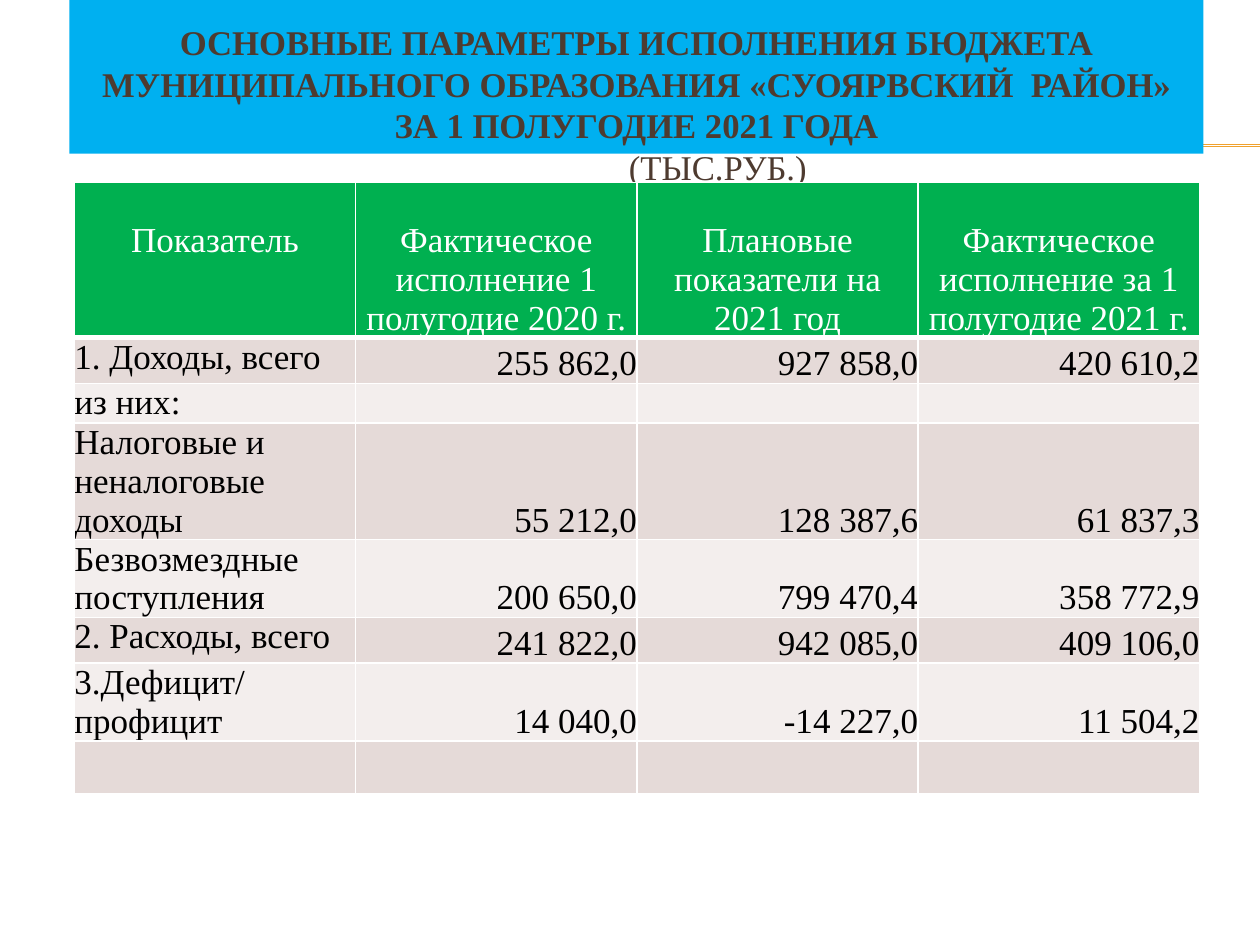
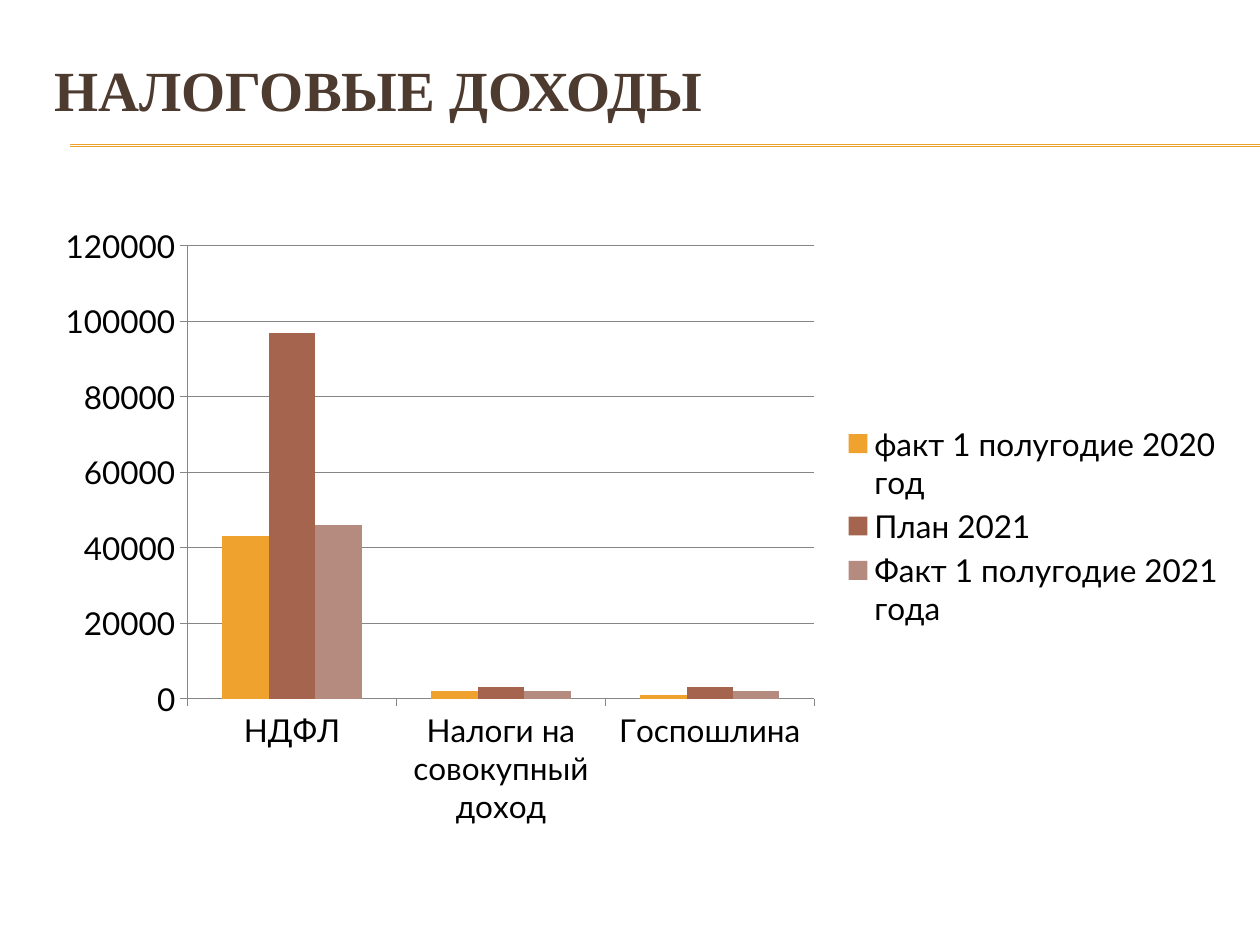
from lxml.etree import SubElement
from pptx import Presentation
from pptx.chart.data import CategoryChartData
from pptx.dml.color import RGBColor
from pptx.enum.chart import XL_CHART_TYPE as ChartType, XL_LEGEND_POSITION as LegendSide
from pptx.enum.chart import XL_TICK_MARK as Tick
from pptx.enum.shapes import MSO_CONNECTOR as Connector, MSO_SHAPE as Shape
from pptx.enum.text import MSO_ANCHOR as Anchor, PP_ALIGN as Align
from pptx.oxml.ns import qn
from pptx.util import Cm, Pt

COLORS = {
    "title": "4E3B30", "band": "00B0F0", "gold": "F0A22E", "header": "00B050",
    "odd_row": "E5DAD8", "even_row": "F3EEED", "white": "FFFFFF", "black": "000000",
    "brick": "A5644E", "rose": "B58B80", "axis": "868686",
}
SERIF, SANS = "Times New Roman", "Lato"


def rgb(name):
    return RGBColor.from_string(COLORS[name])


def write(frame, text, size=20, color="black", bold=False, align=Align.LEFT,
          spacing=None, indent=0):
    """Add one paragraph, filling the first one while it is empty."""
    first = frame.paragraphs[0]
    paragraph = frame.add_paragraph() if first.runs else first
    paragraph.alignment = align
    if spacing:
        paragraph.line_spacing = spacing
    if indent:
        paragraph._p.get_or_add_pPr().set("marL", str(Cm(indent)))
    run = paragraph.add_run()
    run.text = text
    run.font.name, run.font.size, run.font.bold = SERIF, Pt(size), bold
    run.font.color.rgb = rgb(color)


class Deck:
    def __init__(self):
        self.show = Presentation()
        self.show.slide_width, self.show.slide_height = Cm(25.4), Cm(19.05)
        self.slide = None

    def new_slide(self):
        self.slide = self.show.slides.add_slide(self.show.slide_layouts[6])
        # Double gold rule under the title
        for height in (2.92, 2.95):
            self.rule(1.42, 25.4, height)

    def rule(self, left, right, top):
        rule = self.slide.shapes.add_connector(
            Connector.STRAIGHT, Cm(left), Cm(top), Cm(right), Cm(top))
        rule.line.color.rgb, rule.line.width = rgb("gold"), Pt(0.75)
        SubElement(rule._element.spPr, qn("a:effectLst"))

    def band(self, left, top, width, height):
        band = self.slide.shapes.add_shape(
            Shape.RECTANGLE, Cm(left), Cm(top), Cm(width), Cm(height))
        band.shadow.inherit = False
        band.fill.solid()
        band.fill.fore_color.rgb = rgb("band")
        band.line.fill.background()
        frame = band.text_frame
        frame.word_wrap, frame.vertical_anchor = True, Anchor.TOP
        frame.margin_top = Cm(0.43)
        return frame

    def heading(self, text, left, top, width, height):
        heading = self.slide.shapes.add_textbox(Cm(left), Cm(top), Cm(width), Cm(height))
        frame = heading.text_frame
        frame.word_wrap, frame.vertical_anchor = True, Anchor.MIDDLE
        write(frame, text, size=32.4, color="title", bold=True)

    def cell(self, cell, text, row, column):
        header = row == 0
        cell.margin_left = cell.margin_right = cell.margin_bottom = 0
        cell.margin_top = Cm(0.78) if header else 0
        fill = "header" if header else "odd_row" if row % 2 else "even_row"
        # Borders come before the fill in the cell properties
        for side in "LRTB":
            width = Pt(3 if header and side == "B" else 1)
            edge = SubElement(cell._tc.get_or_add_tcPr(), qn(f"a:ln{side}"), w=str(width))
            paint = SubElement(edge, qn("a:solidFill"))
            SubElement(paint, qn("a:srgbClr"), val=COLORS["white"])
        cell.fill.solid()
        cell.fill.fore_color.rgb = rgb(fill)
        if not text:
            return
        if header:
            write(cell.text_frame, text, color="white", align=Align.CENTER)
        elif column:
            cell.vertical_anchor = Anchor.BOTTOM
            write(cell.text_frame, text, align=Align.RIGHT, spacing=1.15)
        else:
            write(cell.text_frame, text)

    def table(self, rows, heights, left, top, width):
        table = self.slide.shapes.add_table(
            len(rows), len(rows[0]), Cm(left), Cm(top), Cm(width), Cm(sum(heights))).table
        for row, (texts, height) in enumerate(zip(rows, heights)):
            table.rows[row].height = Cm(height)
            for column, text in enumerate(texts):
                self.cell(table.cell(row, column), text, row, column)

    def columns(self, categories, series, left, top, width, height):
        data = CategoryChartData()
        data.categories = categories
        for name, values, _ in series:
            data.add_series(name, values)
        chart = self.slide.shapes.add_chart(
            ChartType.COLUMN_CLUSTERED, Cm(left), Cm(top), Cm(width), Cm(height), data).chart
        chart.has_title = False
        chart.font.name, chart.font.size = SANS, Pt(18)
        chart.font.color.rgb = rgb("black")
        chart.has_legend = True
        chart.legend.position = LegendSide.RIGHT
        chart.legend.include_in_layout = False
        plot = chart.plots[0]
        plot.gap_width, plot.vary_by_categories = 150, False
        for bars, (_, _, color) in zip(plot.series, series):
            bars.format.fill.solid()
            bars.format.fill.fore_color.rgb = rgb(color)
        for axis in (chart.category_axis, chart.value_axis):
            axis.major_tick_mark = Tick.OUTSIDE
            axis.format.line.color.rgb = rgb("axis")
        chart.value_axis.has_major_gridlines = True
        chart.value_axis.major_gridlines.format.line.color.rgb = rgb("axis")


def budget_slide(deck):
    deck.new_slide()
    # Title band with the unit of measure below it
    title = deck.band(1.4, 0, 22.86, 3.1)
    style = dict(size=19.8, color="title", align=Align.CENTER, spacing=Pt(23.7))
    for line in ("ОСНОВНЫЕ ПАРАМЕТРЫ ИСПОЛНЕНИЯ БЮДЖЕТА",
                 "МУНИЦИПАЛЬНОГО ОБРАЗОВАНИЯ «СУОЯРВСКИЙ  РАЙОН»",
                 "ЗА 1 ПОЛУГОДИЕ 2021 ГОДА"):
        write(title, line, bold=True, **style)
    write(title, "(ТЫС.РУБ.)", indent=3.28, **style)

    # Budget figures
    rows = [
        ("Показатель", "Фактическое исполнение 1 полугодие 2020 г.",
         "Плановые показатели на 2021 год", "Фактическое исполнение за 1 полугодие 2021 г."),
        ("1. Доходы, всего", "255 862,0", "927 858,0", "420 610,2"),
        ("из них:", "", "", ""),
        ("Налоговые и неналоговые доходы", "55 212,0", "128 387,6", "61 837,3"),
        ("Безвозмездные поступления", "200 650,0", "799 470,4", "358 772,9"),
        ("2. Расходы, всего", "241 822,0", "942 085,0", "409 106,0"),
        ("3.Дефицит/профицит", "14 040,0", "-14 227,0", "11 504,2"),
        ("", "", "", ""),
    ]
    heights = (3.12, 0.92, 0.8, 2.35, 1.56, 0.92, 1.56, 1.07)
    deck.table(rows, heights, 1.5, 3.68, 22.68)


def tax_slide(deck):
    deck.new_slide()
    deck.heading("НАЛОГОВЫЕ ДОХОДЫ", 0.84, 1.04, 24.13, 1.52)
    # Tax revenue by kind
    series = [
        ("факт 1 полугодие 2020 год", (43000, 2000, 1000), "gold"),
        ("План 2021", (97000, 3000, 3000), "brick"),
        ("Факт 1 полугодие 2021 года", (46000, 2000, 2000), "rose"),
    ]
    deck.columns(("НДФЛ", "Налоги на совокупный доход", "Госпошлина"), series,
                 0.84, 4.32, 24.13, 12.57)


def main():
    deck = Deck()
    budget_slide(deck)
    tax_slide(deck)
    deck.show.save("out.pptx")


if __name__ == "__main__":
    main()
